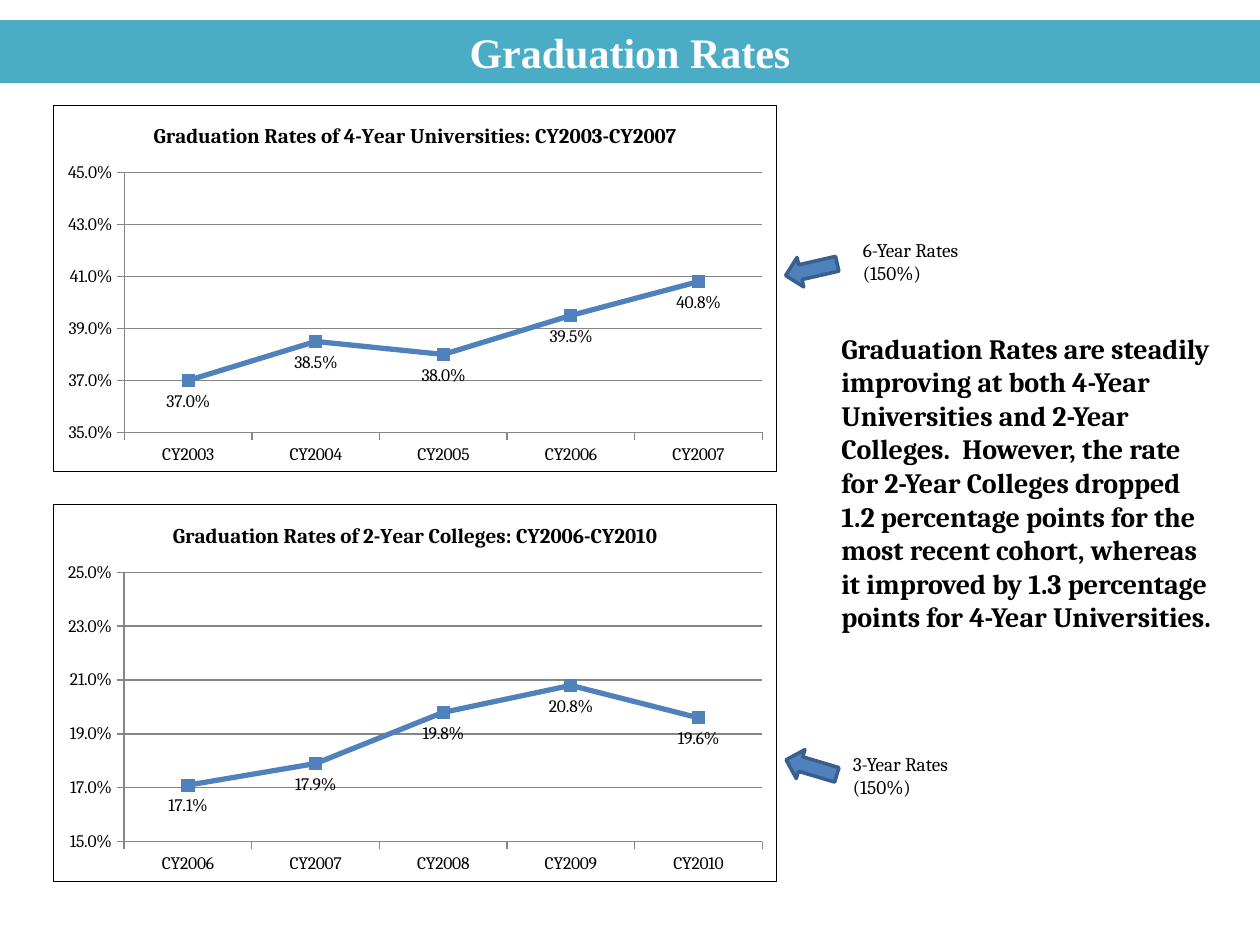
from lxml import etree
from pptx import Presentation
from pptx.chart.data import CategoryChartData
from pptx.dml.color import RGBColor
from pptx.enum.chart import XL_CHART_TYPE, XL_LABEL_POSITION, XL_MARKER_STYLE, XL_TICK_MARK
from pptx.enum.shapes import MSO_SHAPE
from pptx.enum.text import MSO_ANCHOR, PP_ALIGN
from pptx.util import Inches, Pt

LINE = XL_CHART_TYPE.LINE_MARKERS
BELOW = XL_LABEL_POSITION.BELOW
SQUARE = XL_MARKER_STYLE.SQUARE
OUT, NONE = XL_TICK_MARK.OUTSIDE, XL_TICK_MARK.NONE
ARROW = MSO_SHAPE.LEFT_ARROW
MIDDLE, TOP = MSO_ANCHOR.MIDDLE, MSO_ANCHOR.TOP
CENTER, LEFT = PP_ALIGN.CENTER, PP_ALIGN.LEFT

BLUE, EDGE, TEAL = "4F81BD", "3A5F8C", "4BACC6"
BLACK, WHITE, GRAY = "000000", "FFFFFF", "868686"

FRAME = (
    '<c:spPr xmlns:c="http://schemas.openxmlformats.org/drawingml/2006/chart" '
    'xmlns:a="http://schemas.openxmlformats.org/drawingml/2006/main">'
    '<a:solidFill><a:srgbClr val="FFFFFF"/></a:solidFill>'
    '<a:ln w="9525"><a:solidFill><a:srgbClr val="000000"/></a:solidFill></a:ln>'
    '</c:spPr>'
)


def color(code):
    return RGBColor.from_string(code)


def apply(item, **values):
    for name, value in values.items():
        setattr(item, name, value)


class Deck:
    font = "Cambria"

    def __init__(self, slide):
        self.slide = slide
        self.shapes = slide.shapes

    def style(self, font, size, shade=BLACK, bold=False, face=None):
        apply(font, name=face or self.font, size=Pt(size), bold=bold)
        font.color.rgb = color(shade)

    def stroke(self, line, shade, width):
        line.color.rgb = color(shade)
        line.width = Pt(width)

    def place(self, shape, box):
        left, top, width, height = map(Inches, box)
        apply(shape, left=left, top=top, width=width, height=height)

    def label(self, shape, text, align=LEFT, anchor=TOP, **look):
        frame = shape.text_frame
        apply(frame, word_wrap=True, vertical_anchor=anchor, text=text)
        par = frame.paragraphs[0]
        par.alignment = align
        self.style(par.runs[0].font, **look)

    def title(self, text, box):
        shape = self.shapes.title
        self.place(shape, box)
        shape.fill.solid()
        shape.fill.fore_color.rgb = color(TEAL)
        self.label(shape, text, CENTER, MIDDLE, size=24, shade=WHITE,
                   bold=True, face="Times New Roman")

    def text(self, text, box, **look):
        self.label(self.shapes.add_textbox(*map(Inches, box)), text, **look)

    def arrow(self, box, angle):
        shape = self.shapes.add_shape(ARROW, *map(Inches, box))
        shape.rotation = angle
        shape.shadow.inherit = False
        shape.fill.solid()
        shape.fill.fore_color.rgb = color(BLUE)
        self.stroke(shape.line, EDGE, 2)

    def chart(self, title, box, first, rates, low, high):
        data = CategoryChartData(number_format="0.0%")
        data.categories = [f"CY{first + i}" for i in range(len(rates))]
        data.add_series("Series 1", rates)
        chart = self.shapes.add_chart(LINE, *map(Inches, box), data).chart
        apply(chart, has_legend=False, has_title=True)
        self.style(chart.font, 10)

        # Heading and frame
        chart.chart_title.include_in_layout = False
        head = chart.chart_title.text_frame
        head.text = title
        self.style(head.paragraphs[0].runs[0].font, 12, bold=True)
        chart.element.chart.addnext(etree.fromstring(FRAME))

        # Axes
        scale = chart.value_axis
        apply(scale, minimum_scale=low, maximum_scale=high, major_unit=0.02,
              has_major_gridlines=True)
        apply(scale.tick_labels, number_format="0.0%", number_format_is_linked=False)
        self.stroke(scale.major_gridlines.format.line, GRAY, 0.75)
        for axis in (scale, chart.category_axis):
            apply(axis, major_tick_mark=OUT, minor_tick_mark=NONE)
            self.stroke(axis.format.line, GRAY, 0.75)

        # Line, markers and labels
        plot = chart.plots[0]
        plot.vary_by_categories = False
        line = plot.series[0]
        line.smooth = False
        self.stroke(line.format.line, BLUE, 3)
        apply(line.marker, style=SQUARE, size=7)
        line.marker.format.fill.solid()
        line.marker.format.fill.fore_color.rgb = color(BLUE)
        self.stroke(line.marker.format.line, BLUE, 0.75)
        labels = line.data_labels
        apply(labels, show_value=True, position=BELOW, number_format="0.0%",
              number_format_is_linked=False)
        self.style(labels.font, 10)


def main():
    show = Presentation()
    apply(show, slide_width=Inches(10), slide_height=Inches(7.5))
    deck = Deck(show.slides.add_slide(show.slide_layouts[5]))

    # Title band
    deck.title("Graduation Rates", (0, 0.16, 10, 0.5))

    # Charts
    deck.chart("Graduation Rates of 4-Year Universities: CY2003-CY2007",
               (0.42, 0.83, 5.75, 2.92), 2003,
               (0.37, 0.385, 0.38, 0.395, 0.408), 0.35, 0.45)
    deck.chart("Graduation Rates of 2-Year Colleges: CY2006-CY2010",
               (0.42, 4, 5.75, 3), 2006,
               (0.171, 0.179, 0.198, 0.208, 0.196), 0.15, 0.25)

    # Finding
    deck.text("Graduation Rates are steadily improving at both 4-Year "
              "Universities and 2-Year Colleges.  However, the rate for "
              "2-Year Colleges dropped 1.2 percentage points for the most "
              "recent cohort, whereas it improved by 1.3 percentage points "
              "for 4-Year Universities.",
              (6.58, 2.58, 3.17, 3.06), size=16, bold=True)

    # Notes beside the charts, each with its arrow
    for years, left, top, tip, angle in ((6, 6.75, 1.84, 2.02, 347.2),
                                         (3, 6.67, 5.92, 5.97, 16.6)):
        deck.text(f"{years}-Year Rates (150%)", (left, top, 1.08, 0.47), size=11)
        deck.arrow((6.23, tip, 0.42, 0.24), angle)

    show.save("out.pptx")


if __name__ == "__main__":
    main()
